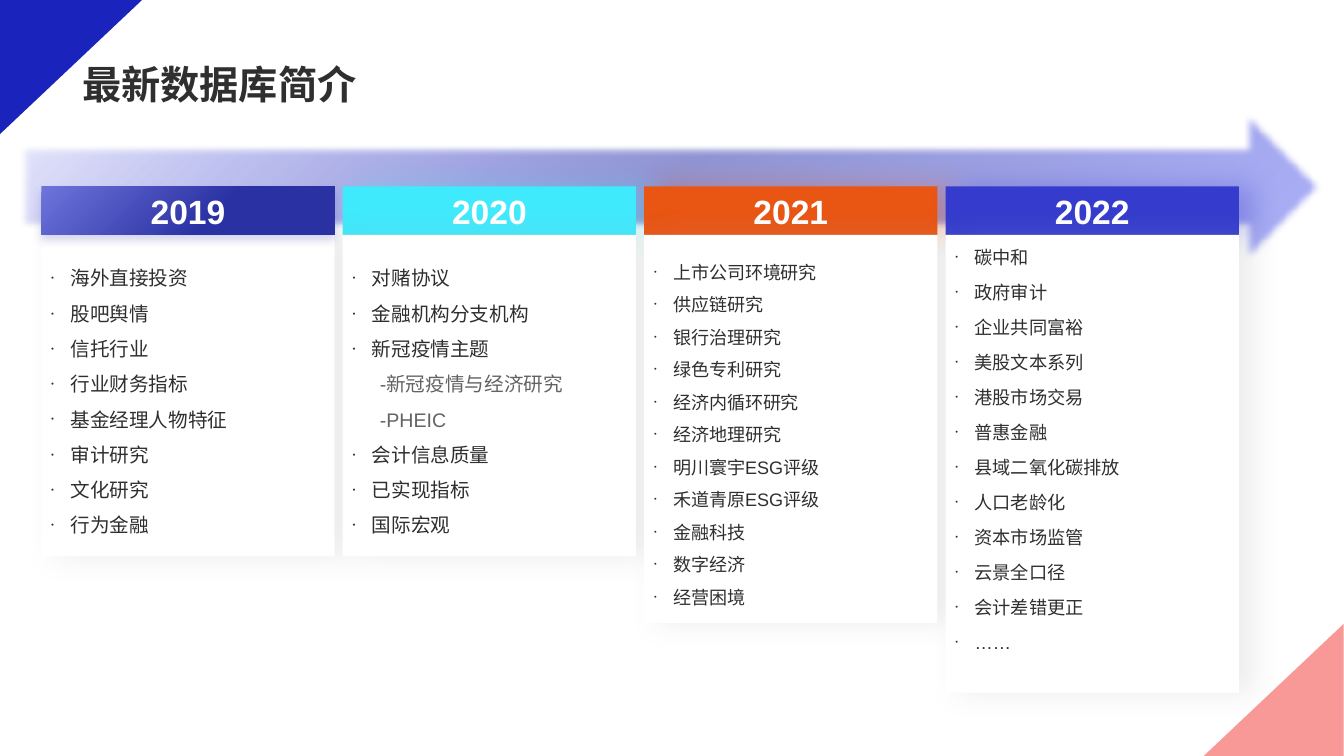
from lxml.etree import SubElement
from pptx import Presentation
from pptx.dml.color import RGBColor
from pptx.enum.shapes import MSO_SHAPE
from pptx.enum.text import MSO_ANCHOR, PP_ALIGN
from pptx.oxml.ns import qn
from pptx.util import Pt

LEFT, TOP, STEP, WIDTH, HEAD = 29.5, 133.2, 215.3, 209.5, 34.6
DARK, GREY = "2F2F2F", "636363"

# year, header colour, card height, text size, line spacing, bottom inset, items
COLUMNS = [
    ("2019", None, 229.7, 14, 1.5, 3.6,
     ["海外直接投资", "股吧舆情", "信托行业", "行业财务指标",
      "基金经理人物特征", "审计研究", "文化研究", "行为金融"]),
    ("2020", "40EAFD", 229.7, 14, 1.5, 3.6,
     ["对赌协议", "金融机构分支机构", "新冠疫情主题", "-新冠疫情与经济研究",
      "-PHEIC", "会计信息质量", "已实现指标", "国际宏观"]),
    ("2021", "E95513", 277.2, 12.9, 1.5, 3.6,
     ["上市公司环境研究", "供应链研究", "银行治理研究", "绿色专利研究",
      "经济内循环研究", "经济地理研究", "明川寰宇ESG评级", "禾道青原ESG评级",
      "金融科技", "数字经济", "经营困境"]),
    ("2022", "353CCD", 326.9, 13, 1.6, 33,
     ["碳中和", "政府审计", "企业共同富裕", "美股文本系列", "港股市场交易",
      "普惠金融", "县域二氧化碳排放", "人口老龄化", "资本市场监管",
      "云景全口径", "会计差错更正", "……"]),
]


def color(text):
    return RGBColor.from_string(text)


def node(parent, tag, **attrs):
    return SubElement(parent, qn(tag), {k: str(v) for k, v in attrs.items()})


def tint(parent, shade, alpha=100):
    """Add a colour with its opacity in percent."""
    item = node(parent, "a:srgbClr", val=shade)
    if alpha < 100:
        node(item, "a:alpha", val=alpha * 1000)


def add_box(slide, kind, box, fill=None):
    shape = slide.shapes.add_shape(kind, *map(Pt, box))
    shape.shadow.inherit = False
    shape.line.fill.background()
    if fill:
        shape.fill.solid()
        shape.fill.fore_color.rgb = color(fill)
    return shape


def add_blend(shape, stops):
    """Give the shape a gradient; return it so that its direction can be set."""
    shape.fill.background()
    props = shape._element.spPr
    blend = node(props, "a:gradFill", rotWithShape=1)
    props.replace(props.find(qn("a:noFill")), blend)
    row = node(blend, "a:gsLst")
    for place, shade, alpha in stops:
        tint(node(row, "a:gs", pos=place * 1000), shade, alpha)
    return blend


def add_shadow(shape, shade, alpha, blur, dist, angle=0):
    effects = shape._element.spPr.find(qn("a:effectLst"))
    tint(node(effects, "a:outerShdw", blurRad=Pt(blur), dist=Pt(dist),
              dir=angle * 60000, algn="ctr", rotWithShape=0), shade, alpha)


def style(para, size, shade, bold=False):
    for run in para.runs:
        font = run.font
        font.name, font.size, font.bold = "Arial", Pt(size), bold
        font.color.rgb = color(shade)


def add_title(slide, text):
    frame = slide.shapes.add_textbox(Pt(51.8), 0, Pt(855.4), Pt(80.6)).text_frame
    frame.word_wrap = True
    frame.vertical_anchor = MSO_ANCHOR.BOTTOM
    frame.text = text
    frame.paragraphs[0].line_spacing = 0.9
    style(frame.paragraphs[0], 28, DARK, True)


def add_corner(slide, left, top, angle, fill):
    shape = add_box(slide, MSO_SHAPE.RIGHT_TRIANGLE, (left, top, 95.8, 101.5), fill)
    shape.rotation = angle


def add_arrow(slide):
    arrow = add_box(slide, MSO_SHAPE.RIGHT_ARROW, (14.4, 74.2, 931.7, 118.1))
    blend = add_blend(arrow, [(0, "575FDF", 12), (50, "9194D2", 100),
                              (100, "ACB0F9", 100)])
    focus = node(blend, "a:path", path="circle")
    node(focus, "a:fillToRect", r=100000, b=100000)
    effects = arrow._element.spPr.find(qn("a:effectLst"))
    node(effects, "a:softEdge", rad=Pt(5))


def add_head(slide, left, year, fill):
    head = add_box(slide, MSO_SHAPE.RECTANGLE, (left, TOP, WIDTH, HEAD), fill)
    if fill:
        add_shadow(head, fill, 32, 20, 10)
    else:
        blend = add_blend(head, [(0, "6D74DA", 100), (60, "2A31A3", 100)])
        node(blend, "a:lin", ang=45 * 60000, scaled=0)
        add_shadow(head, "2A31A3", 20, 6, 4, 90)
    frame = head.text_frame
    frame.text = year
    frame.vertical_anchor = MSO_ANCHOR.MIDDLE
    frame.paragraphs[0].alignment = PP_ALIGN.CENTER
    style(frame.paragraphs[0], 24, "FFFFFF", True)


def add_card(slide, left, height, size, space, inset, items):
    card = add_box(slide, MSO_SHAPE.RECTANGLE,
                   (left, TOP + HEAD, WIDTH, height), "FFFFFF")
    add_shadow(card, "A6A6A6", 20, 20, 10)
    frame = card.text_frame
    frame.word_wrap = True
    frame.vertical_anchor = MSO_ANCHOR.MIDDLE
    frame.margin_bottom = Pt(inset)
    frame.text = "\n".join(items)
    for para in frame.paragraphs:
        sub = para.text.startswith("-")
        para.alignment = PP_ALIGN.LEFT
        para.line_spacing = space
        style(para, size, GREY if sub else DARK)
        props = para._p.get_or_add_pPr()
        props.set("marL", str(Pt(19.4 if sub else 13.7)))
        if not sub:
            props.set("indent", str(-Pt(13.7)))
            node(props, "a:buSzPct", val=25000)
            node(props, "a:buFont", typeface="Arial")
            node(props, "a:buChar", char="●")


def main():
    deck = Presentation()
    deck.slide_width, deck.slide_height = Pt(960), Pt(540)
    slide = deck.slides.add_slide(deck.slide_layouts[6])
    add_title(slide, "最新数据库简介")
    add_corner(slide, 2.9, -2.9, 90, "1A24BD")
    add_arrow(slide)
    lefts = [LEFT + i * STEP for i in range(len(COLUMNS))]
    pairs = list(zip(lefts, COLUMNS))
    for left, (year, fill, *_) in pairs[1:]:
        add_head(slide, left, year, fill)
    for left, (_, _, *card) in pairs:
        add_card(slide, left, *card)
    add_head(slide, LEFT, *COLUMNS[0][:2])
    add_corner(slide, 861.1, 442.8, 270, "F99997")
    deck.save("out.pptx")


if __name__ == "__main__":
    main()
